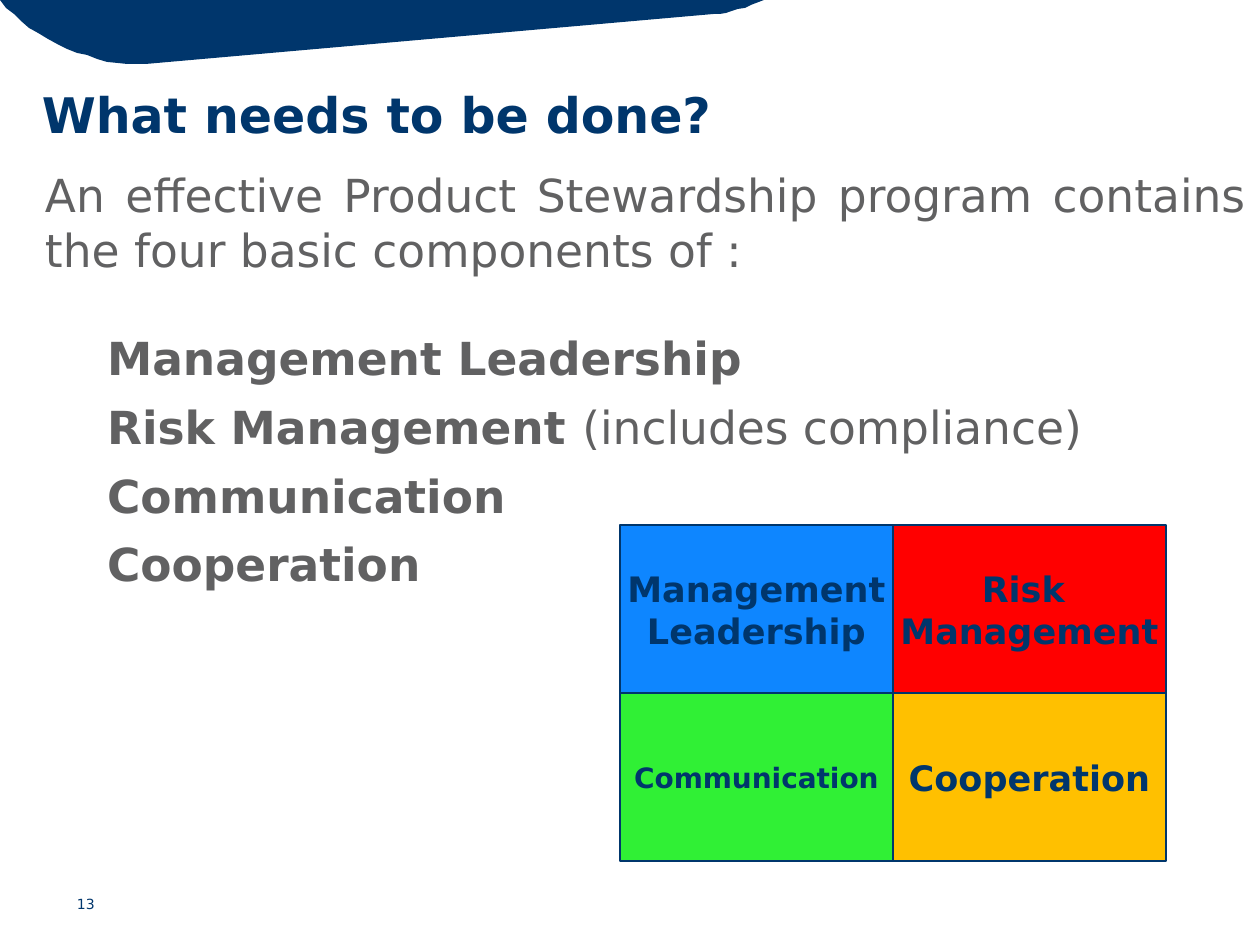
from pptx import Presentation
from pptx.dml.color import RGBColor
from pptx.enum.shapes import MSO_SHAPE
from pptx.enum.text import MSO_ANCHOR, PP_ALIGN
from pptx.util import Pt

SCALE = 914400 / 126  # EMU per px
FONT = "DejaVu Sans"
COLORS = {
    "navy": "00366C",
    "gray": "616162",
    "blue": "0E86FF",
    "red": "FF0000",
    "green": "30F035",
    "amber": "FFC000",
}
BANNER_OUTLINE = [
    (146, 64), (714, 14), (720, 14), (726, 13), (732, 11), (738, 9),
    (745, 8), (751, 5), (764, 0), (0, 0), (6, 8), (14, 14), (21, 21),
    (29, 28), (38, 33), (48, 39), (57, 44), (67, 49), (77, 53), (87, 55),
    (97, 59), (107, 62), (117, 63), (127, 64), (136, 64),
]
INTRO = "An effective Product Stewardship program contains the four basic components of :"
COMPONENTS = [
    ("Management Leadership", ""),
    ("Risk Management ", "(includes compliance)"),
    ("Communication", ""),
    ("Cooperation", ""),
]
TILES = [
    (["Management", "Leadership"], "blue", 20),
    (["Risk ", "Management"], "red", 20),
    (["Communication"], "green", 16),
    (["Cooperation"], "amber", 20),
]


def px(value):
    return round(value * SCALE)


def color(name):
    return RGBColor.from_string(COLORS[name])


def style(para, size, color_name, bold=False):
    para.font.name = FONT
    para.font.size = Pt(size)
    para.font.bold = bold
    para.font.color.rgb = color(color_name)


def add_text_box(page, left, top, width, height, margins):
    box = page.shapes.add_textbox(px(left), px(top), px(width), px(height))
    frame = box.text_frame
    frame.word_wrap = True
    frame.margin_left = frame.margin_right = px(margins[0])
    frame.margin_top = frame.margin_bottom = px(margins[1])
    return frame


def add_banner(page, left, top):
    points = [(left + x, top + y) for x, y in BANNER_OUTLINE]
    builder = page.shapes.build_freeform(*points[0], scale=SCALE)
    builder.add_line_segments(points[1:], close=True)
    banner = builder.convert_to_shape()
    banner.shadow.inherit = False
    banner.fill.solid()
    banner.fill.fore_color.rgb = color("navy")
    banner.line.fill.background()


def add_title(page, left, top, width, height):
    para = add_text_box(page, left, top, width, height, (0, 6)).paragraphs[0]
    para.text = "What needs to be done?"
    para.line_spacing = Pt(36)
    style(para, 28, "navy", bold=True)


def add_body(page, left, top, width, height):
    frame = add_text_box(page, left, top, width, height, (13, 9))
    intro = frame.paragraphs[0]
    intro.text = INTRO
    intro.alignment = PP_ALIGN.JUSTIFY
    intro.space_after = Pt(3)
    style(intro, 26, "gray")

    # Indented components, the first one set apart from the intro
    for index, (name, remark) in enumerate(COMPONENTS):
        para = frame.add_paragraph()
        properties = para._p.get_or_add_pPr()
        properties.set("marL", str(px(62)))
        properties.set("indent", "0")
        para.space_before = Pt(6 if index else 28)
        para.space_after = Pt(2)
        style(para, 26, "gray", bold=True)
        para.add_run().text = name
        if remark:
            span = para.add_run()
            span.text = remark
            span.font.bold = False


def add_tile_grid(page, left, top, width, height):
    tile_width, tile_height = width / 2, height / 2
    for index, (lines, fill, size) in enumerate(TILES):
        row, column = divmod(index, 2)
        tile = page.shapes.add_shape(
            MSO_SHAPE.RECTANGLE,
            px(left + column * tile_width), px(top + row * tile_height),
            px(tile_width), px(tile_height))
        tile.shadow.inherit = False
        tile.fill.solid()
        tile.fill.fore_color.rgb = color(fill)
        tile.line.color.rgb = color("navy")
        tile.line.width = Pt(0.75)
        frame = tile.text_frame
        frame.word_wrap = False
        frame.vertical_anchor = MSO_ANCHOR.MIDDLE
        frame.text = "\n".join(lines)
        for para in frame.paragraphs:
            para.alignment = PP_ALIGN.CENTER
            style(para, size, "navy", bold=True)


def add_page_number(page, left, top, width, height):
    para = add_text_box(page, left, top, width, height, (13, 6)).paragraphs[0]
    para.text = "13"
    style(para, 8, "navy")


def main():
    deck = Presentation()
    deck.slide_width, deck.slide_height = px(1260), px(945)
    page = deck.slides.add_slide(deck.slide_layouts[6])
    add_banner(page, 0, 0)
    add_page_number(page, 64, 890, 118, 30)
    add_body(page, 32, 158, 1228, 622)
    add_tile_grid(page, 620, 525, 546, 336)
    add_title(page, 42, 74, 1134, 72)
    deck.save("out.pptx")


if __name__ == "__main__":
    main()
